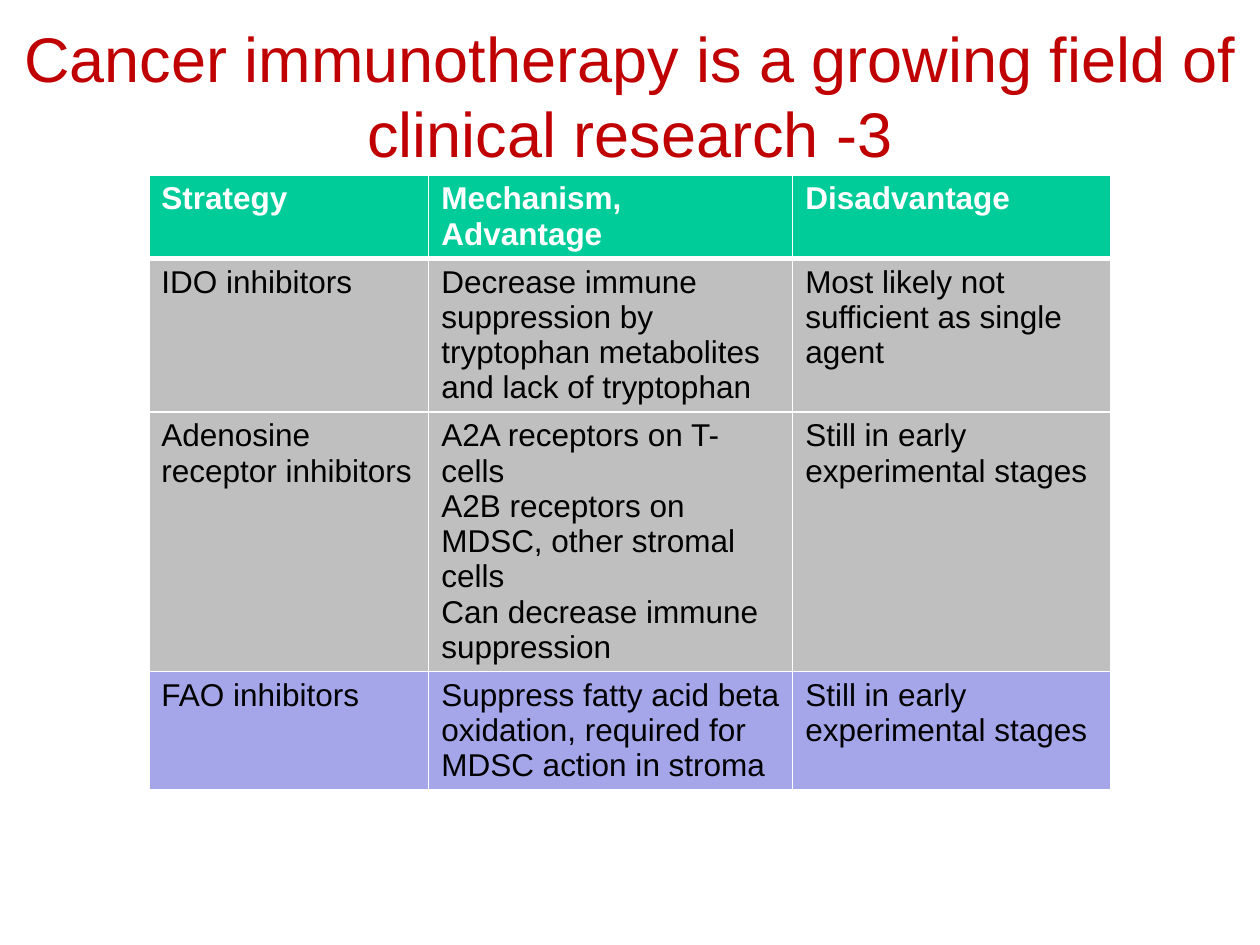
from lxml import etree
from pptx import Presentation
from pptx.dml.color import RGBColor
from pptx.enum.text import MSO_ANCHOR, PP_ALIGN
from pptx.oxml.ns import qn
from pptx.util import Pt

CENTER = PP_ALIGN.CENTER
BOTTOM = MSO_ANCHOR.BOTTOM

WHITE, BLACK, RED = "FFFFFF", "000000", "C00000"
GREEN, GRAY, LILAC = "00CC99", "BFBFBF", "A5A5E9"

TITLE = "Cancer immunotherapy is a growing field of clinical research -3"
COLUMN_WIDTHS = [160, 208, 182]
ROW_HEIGHT = 29.5
# Each row: fill, then the paragraphs of every cell
ROWS = [
    (GREEN, [["Strategy"], ["Mechanism, Advantage"], ["Disadvantage"]]),
    (GRAY, [["IDO inhibitors"],
            ["Decrease immune suppression by tryptophan metabolites "
             "and lack of tryptophan"],
            ["Most likely not sufficient as single agent"]]),
    (GRAY, [["Adenosine receptor inhibitors"],
            ["A2A receptors on T-cells",
             "A2B receptors on MDSC, other stromal cells",
             "Can decrease immune suppression"],
            ["Still in early experimental stages"]]),
    (LILAC, [["FAO inhibitors"],
             ["Suppress fatty acid beta oxidation, required for "
              "MDSC action in stroma"],
             ["Still in early experimental stages"]]),
]


def color(value):
    return RGBColor.from_string(value)


class SlideBuilder:
    font = "Arial"
    title_size = 36
    table_size = 18

    def __init__(self, page):
        self.page = page

    def add_span(self, paragraph, text, size, text_color, bold=False):
        span = paragraph.add_run()
        span.text = text
        span.font.name = self.font
        span.font.size = Pt(size)
        span.font.bold = bold
        span.font.color.rgb = color(text_color)

    def add_title(self, text, left, top, width, height):
        box = self.page.shapes.add_textbox(Pt(left), Pt(top), Pt(width), Pt(height))
        frame = box.text_frame
        frame.word_wrap = True
        frame.vertical_anchor = BOTTOM
        frame.margin_bottom = Pt(0)
        paragraph = frame.paragraphs[0]
        paragraph.alignment = CENTER
        paragraph.line_spacing = Pt(43)
        self.add_span(paragraph, text, self.title_size, RED)

    def add_border(self, cell, side, width):
        properties = cell._tc.get_or_add_tcPr()
        line = etree.SubElement(properties, qn(f"a:ln{side}"), w=str(Pt(width)))
        fill = etree.SubElement(line, qn("a:solidFill"))
        etree.SubElement(fill, qn("a:srgbClr"), val=WHITE)

    def fill_cell(self, cell, paragraphs, fill, header, top_width, bottom_width):
        # Borders come before the fill in the cell properties
        for side, width in zip("LRTB", (1, 1, top_width, bottom_width)):
            self.add_border(cell, side, width)
        cell.fill.solid()
        cell.fill.fore_color.rgb = color(fill)
        frame = cell.text_frame
        for index, text in enumerate(paragraphs):
            paragraph = frame.add_paragraph() if index else frame.paragraphs[0]
            self.add_span(paragraph, text, self.table_size,
                          WHITE if header else BLACK, header)

    def add_table(self, rows, widths, row_height, left, top):
        table = self.page.shapes.add_table(
            len(rows), len(widths), Pt(left), Pt(top),
            Pt(sum(widths)), Pt(row_height * len(rows))).table
        for column, width in zip(table.columns, widths):
            column.width = Pt(width)
        for row_index, (fill, texts) in enumerate(rows):
            for column_index, paragraphs in enumerate(texts):
                self.fill_cell(table.cell(row_index, column_index), paragraphs,
                               fill, header=row_index == 0,
                               top_width=3 if row_index == 1 else 1,
                               bottom_width=3 if row_index == 0 else 1)


def main():
    deck = Presentation()
    deck.slide_width, deck.slide_height = Pt(720), Pt(540)
    page = deck.slides.add_slide(deck.slide_layouts[6])
    builder = SlideBuilder(page)

    # Strategy table
    builder.add_table(ROWS, COLUMN_WIDTHS, ROW_HEIGHT, left=85, top=100)
    # Title
    builder.add_title(TITLE, left=0, top=7.2, width=720, height=90)

    deck.save("out.pptx")


if __name__ == "__main__":
    main()
